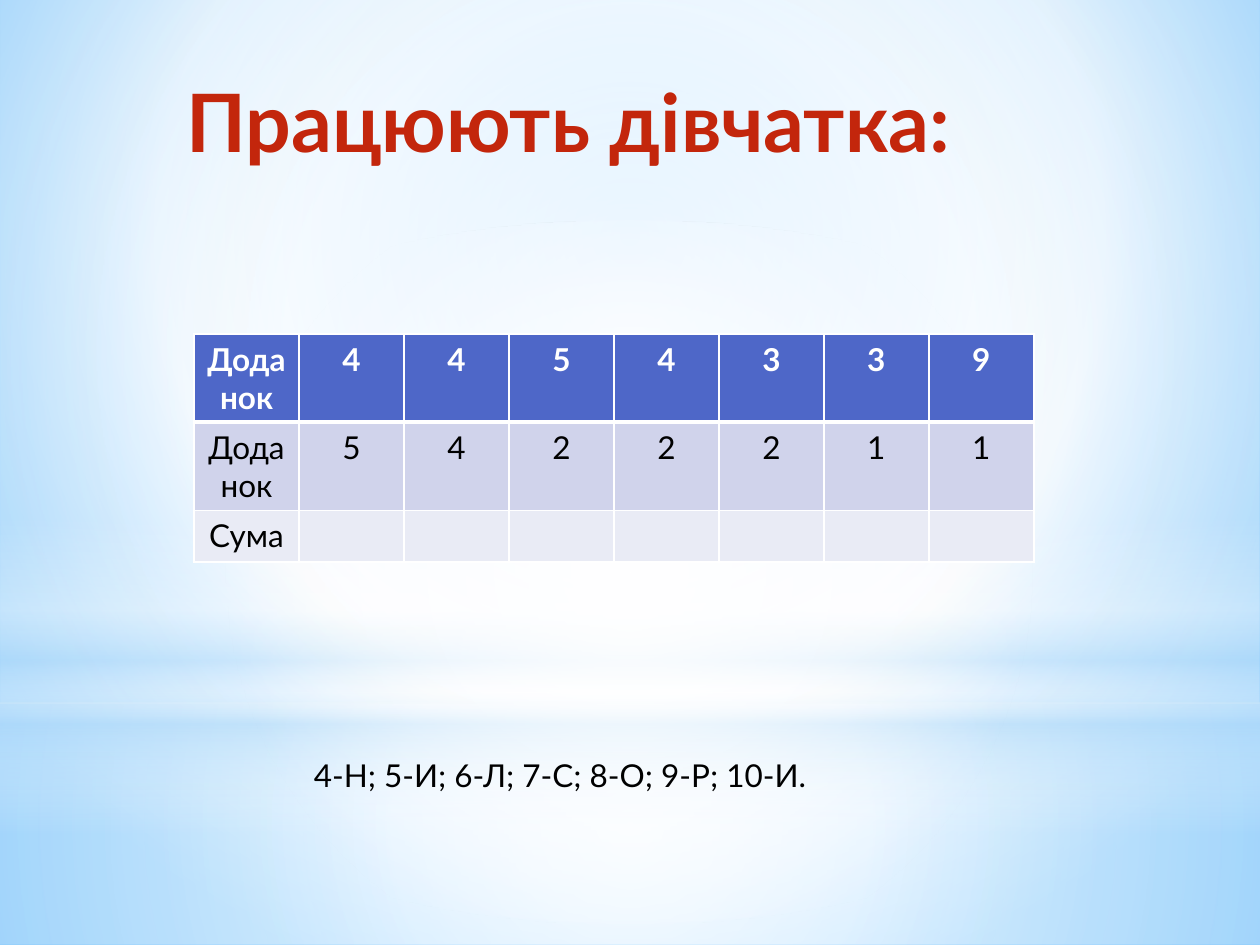
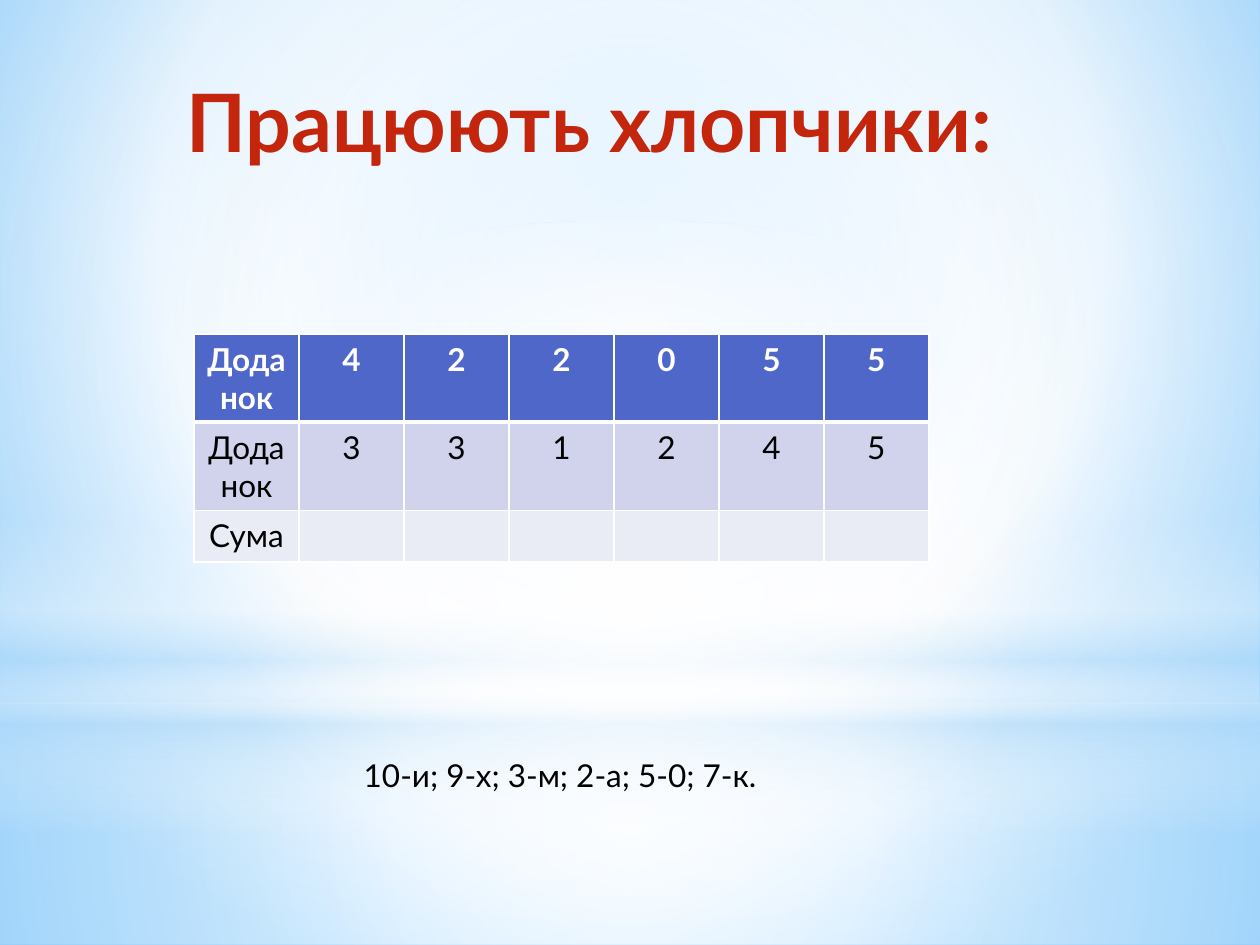
from lxml.etree import SubElement, Element
from pptx import Presentation
from pptx.dml.color import RGBColor
from pptx.enum.shapes import MSO_SHAPE
from pptx.enum.text import MSO_ANCHOR, PP_ALIGN
from pptx.oxml.ns import qn
from pptx.util import Inches, Pt

WIDTH, HEIGHT = Inches(10), Inches(7.5)
FONT = "Lato"
COLORS = {
    "title": "C3260C", "text": "000000", "white": "FFFFFF", "mist": "B4DCFA",
    "sky": "9ED5FF", "azure": "5BB9FF",
    "header": "4E67C8", "band": "D0D3EB", "pale": "E9EBF5",
}
COLUMN_WIDTH = WIDTH // 12
ROW_HEIGHTS = (0.7, 0.7, 0.41)
ROW_FILLS = ("header", "band", "pale")
CENTER = (50, 50, 50, 50)
SKY_STOPS = [(0, "sky", 100), (60, "white", 100), (100, "azure", 100)]
LAYERS = [
    (MSO_SHAPE.RECTANGLE, (0, 74.4, 100, 25.6), CENTER,
     [(0, "white", 91), (37, "white", 76), (100, "mist", 79)]),
    (MSO_SHAPE.RECTANGLE, (0, 0, 100, 74.4), CENTER,
     [(0, "white", 89), (48, "white", 62), (100, "mist", 79)]),
    (MSO_SHAPE.RECTANGLE, (0, 54.93, 100, 33.33), None,
     [(0, "white", 0), (29, "white", 30), (45, "mist", 40),
      (55, "white", 26), (65, "mist", 60), (100, "white", 0)]),
    (MSO_SHAPE.OVAL, (0, 23.33, 100, 74.4), CENTER,
     [(0, "white", 100), (56, "white", 0)]),
]
SLIDES = [
    ("Працюють дівчатка:", "4454339", "5422211",
     "4-Н; 5-И; 6-Л; 7-С; 8-О; 9-Р; 10-И."),
    ("Працюють хлопчики:", "422055", "331245",
     "10-и; 9-х; 3-м; 2-а; 5-0; 7-к."),
]


def place(left, top, width, height):
    """Turn percentages of the slide into lengths."""
    return [int(share * side / 100) for share, side in
            zip((left, top, width, height), (WIDTH, HEIGHT, WIDTH, HEIGHT))]


def add_color(parent, color, opacity=100):
    """Append a colour with its opacity in percent."""
    node = SubElement(parent, qn("a:srgbClr"), val=COLORS[color])
    if opacity < 100:
        SubElement(node, qn("a:alpha"), val=str(opacity * 1000))


def fill_gradient(fill, holder, stops, focus=None):
    """Fill with a circular gradient around a focus, or a vertical one."""
    fill.background()
    gradient = Element(qn("a:gradFill"), rotWithShape="1")
    stop_list = SubElement(gradient, qn("a:gsLst"))
    for position, color, opacity in stops:
        stop = SubElement(stop_list, qn("a:gs"), pos=str(position * 1000))
        add_color(stop, color, opacity)
    if focus:
        circle = SubElement(gradient, qn("a:path"), path="circle")
        sides = {side: str(inset * 1000) for side, inset in zip("ltrb", focus)}
        SubElement(circle, qn("a:fillToRect"), **sides)
    else:
        SubElement(gradient, qn("a:lin"), ang="5400000", scaled="0")
    holder.replace(holder.find(qn("a:noFill")), gradient)


def write_text(frame, text, size=18, color="text", bold=False, align=PP_ALIGN.CENTER):
    """Write one formatted paragraph into a text frame."""
    frame.word_wrap = True
    para = frame.paragraphs[0]
    para.alignment = align
    span = para.add_run()
    span.text = text
    span.font.name, span.font.size, span.font.bold = FONT, Pt(size), bold
    span.font.color.rgb = RGBColor.from_string(COLORS[color])


def add_text(page, area, text, **style):
    """Add a text box on an area given in percentages."""
    box = page.shapes.add_textbox(*place(*area))
    box.text_frame.vertical_anchor = MSO_ANCHOR.TOP
    write_text(box.text_frame, text, **style)


def add_backdrop(page):
    """Lay the translucent sky layers over the background."""
    for kind, area, focus, stops in LAYERS:
        layer = page.shapes.add_shape(kind, *place(*area))
        layer.shadow.inherit = False
        layer.line.fill.background()
        fill_gradient(layer.fill, layer.element.spPr, stops, focus)


def set_borders(cell, top=1, bottom=1):
    """Draw white borders around a cell, widths in points."""
    properties = cell._tc.get_or_add_tcPr()
    for side, width in (("L", 1), ("R", 1), ("T", top), ("B", bottom)):
        line = SubElement(properties, qn(f"a:ln{side}"), w=str(Pt(width)))
        add_color(SubElement(line, qn("a:solidFill")), "white")


def add_sums_table(page, first_addends, second_addends):
    """Add the table of addends with an empty row for the sums."""
    rows = [["Доданок", *first_addends], ["Доданок", *second_addends],
            ["Сума"] + [""] * len(first_addends)]
    columns = len(rows[0])
    left, top, _, _ = place(15.4, 35.33, 0, 0)
    table = page.shapes.add_table(len(rows), columns, left, top, COLUMN_WIDTH * columns,
                                  Inches(sum(ROW_HEIGHTS))).table
    for column in table.columns:
        column.width = COLUMN_WIDTH
    for index, values in enumerate(rows):
        table.rows[index].height = Inches(ROW_HEIGHTS[index])
        header = index == 0
        for cell, value in zip(table.rows[index].cells, values):
            set_borders(cell, top=3 if index == 1 else 1, bottom=3 if header else 1)
            cell.fill.solid()
            cell.fill.fore_color.rgb = RGBColor.from_string(COLORS[ROW_FILLS[index]])
            if value:
                write_text(cell.text_frame, value, bold=header,
                           color="white" if header else "text")


def main():
    """Build the two addition exercises."""
    deck = Presentation()
    deck.slide_width, deck.slide_height = WIDTH, HEIGHT
    master = deck.slide_master
    sky = master.background.fill
    fill_gradient(sky, master.element.find(".//" + qn("p:bgPr")), SKY_STOPS, (20, 10, 20, 60))
    for title, first_addends, second_addends, letter_key in SLIDES:
        page = deck.slides.add_slide(deck.slide_layouts[6])
        add_backdrop(page)
        add_text(page, (13.8, 6.93, 71.2, 16.67), title, size=46, color="title",
                 bold=True, align=PP_ALIGN.LEFT)
        add_sums_table(page, first_addends, second_addends)
        add_text(page, (16.9, 79.33, 55.1, 5.33), letter_key)
    deck.save("out.pptx")


if __name__ == "__main__":
    main()
